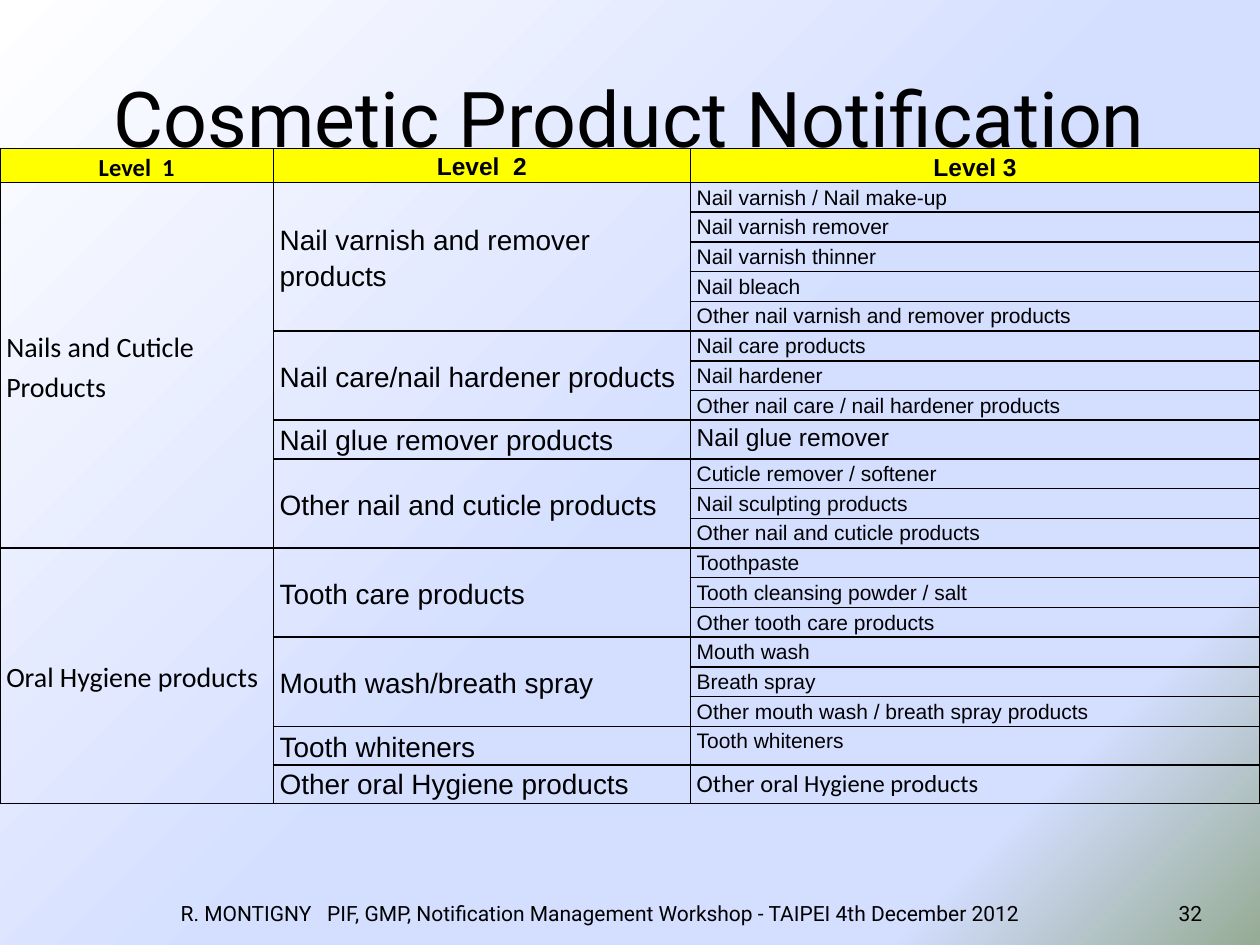
import pptx
import pptx.dml.color
import pptx.enum.text
import pptx.oxml
import pptx.oxml.ns
import pptx.util
from pptx.dml.color import RGBColor
from pptx.enum.text import MSO_ANCHOR, PP_ALIGN
from pptx.util import Inches, Pt

BLACK = RGBColor(0x00, 0x00, 0x00)
YELLOW = RGBColor(0xFF, 0xFF, 0x00)
WHITE = RGBColor(0xFF, 0xFF, 0xFF)
PALE_BLUE = RGBColor(0xD4, 0xDE, 0xFF)
SAGE = RGBColor(0x96, 0xAB, 0x94)
BACKGROUND_STOPS = [(0, WHITE), (53, PALE_BLUE), (83, PALE_BLUE), (100, SAGE)]

TOP, MIDDLE = MSO_ANCHOR.TOP, MSO_ANCHOR.MIDDLE
LEFT, CENTER, RIGHT = PP_ALIGN.LEFT, PP_ALIGN.CENTER, PP_ALIGN.RIGHT

HEADERS = [("Level  1", "Calibri", TOP), ("Level  2", "Arial", TOP), ("Level 3", "Arial", MIDDLE)]
# Level 1 -> level 2 -> level 3
CATEGORIES = {
    "Nails and Cuticle Products": {
        "Nail varnish and remover products": [
            "Nail varnish / Nail make-up", "Nail varnish remover", "Nail varnish thinner",
            "Nail bleach", "Other nail varnish and remover products"],
        "Nail care/nail hardener products": [
            "Nail care products", "Nail hardener", "Other nail care / nail hardener products"],
        "Nail glue remover products": ["Nail glue remover"],
        "Other nail and cuticle products": [
            "Cuticle remover / softener", "Nail sculpting products",
            "Other nail and cuticle products"],
    },
    "Oral Hygiene products": {
        "Tooth care products": [
            "Toothpaste", "Tooth cleansing powder / salt", "Other tooth care products"],
        "Mouth wash/breath spray": [
            "Mouth wash", "Breath spray", "Other mouth wash / breath spray products"],
        "Tooth whiteners": ["Tooth whiteners"],
        "Other oral Hygiene products": ["Other oral Hygiene products"],
    },
}
TOP_ANCHORED = {"Nail glue remover products", "Other oral Hygiene products"}
LEVEL_3_FONTS = {"Nail glue remover": (14, "Arial"), "Other oral Hygiene products": (14, "Calibri")}


def write(frame, text, size, font, align):
    paragraph = frame.paragraphs[0]
    paragraph.text = text
    paragraph.alignment = align
    paragraph.font.size = Pt(size)
    paragraph.font.name = font
    paragraph.font.color.rgb = BLACK
    return paragraph


def fill_cell(cell, text, size, font, align=LEFT, anchor=MIDDLE, bold=False):
    paragraph = write(cell.text_frame, text, size, font, align)
    paragraph.line_spacing = 1.15
    paragraph.font.bold = bold
    cell.vertical_anchor = anchor


prs = pptx.Presentation()
prs.slide_width, prs.slide_height = Inches(10), Inches(7.5)
slide = prs.slides.add_slide(prs.slide_layouts[6])

background = slide.background.fill
background.gradient()
background.gradient_angle = 315
stops = slide.element.find(".//" + pptx.oxml.ns.qn("a:gsLst"))
for stop in list(stops):
    stops.remove(stop)
for position, color in BACKGROUND_STOPS:
    stops.append(pptx.oxml.parse_xml(
        f'<a:gs {pptx.oxml.ns.nsdecls("a")} pos="{position * 1000}">'
        f'<a:srgbClr val="{color}"/></a:gs>'))

for text, box, size, align in [
    ("R. MONTIGNY   PIF, GMP, Notification Management Workshop - TAIPEI 4th December 2012",
     (0.59, 7.05, 8.35, 0.4), 12, CENTER),
    ("32", (9.09, 7.05, 0.55, 0.4), 12, RIGHT),
    ("Cosmetic Product Notification", (0.5, 0.3, 9, 1.25), 44, CENTER),
]:
    frame = slide.shapes.add_textbox(*map(Inches, box)).text_frame
    frame.word_wrap = True
    frame.vertical_anchor = MIDDLE
    write(frame, text, size, "Roboto", align)

row_count = 1 + sum(len(items) for groups in CATEGORIES.values() for items in groups.values())
table = slide.shapes.add_table(
    row_count, 3, Inches(0), Inches(1.18), Inches(10), Inches(5.12)).table
table.first_row = table.horz_banding = False
for column, width in zip(table.columns, (2.17, 3.31, 4.52)):
    column.width = Inches(width)
for row in table.rows:
    row.height = Inches(4.72) // (row_count - 1)
table.rows[0].height = Inches(0.26)

for cell in table.iter_cells():
    cell.margin_left = cell.margin_right = Inches(0.05)
    cell.margin_top = cell.margin_bottom = 0
    cell.fill.background()
    properties = cell._tc.get_or_add_tcPr()
    for index, side in enumerate(("lnL", "lnR", "lnT", "lnB")):
        properties.insert(index, pptx.oxml.parse_xml(
            f'<a:{side} {pptx.oxml.ns.nsdecls("a")} w="{Pt(1)}"><a:solidFill>'
            f'<a:srgbClr val="{BLACK}"/></a:solidFill></a:{side}>'))

for column, (text, font, anchor) in enumerate(HEADERS):
    cell = table.cell(0, column)
    fill_cell(cell, text, 14, font, CENTER, anchor, bold=True)
    cell.fill.solid()
    cell.fill.fore_color.rgb = YELLOW

row = 1
for category, groups in CATEGORIES.items():
    category_row = row
    for group, items in groups.items():
        group_row = row
        for item in items:
            size, font = LEVEL_3_FONTS.get(item, (12, "Arial"))
            fill_cell(table.cell(row, 2), item, size, font, anchor=TOP)
            row += 1
        group_cell = table.cell(group_row, 1)
        if len(items) > 1:
            group_cell.merge(table.cell(row - 1, 1))
        fill_cell(group_cell, group, 16, "Arial", anchor=TOP if group in TOP_ANCHORED else MIDDLE)
    category_cell = table.cell(category_row, 0)
    category_cell.merge(table.cell(row - 1, 0))
    fill_cell(category_cell, category, 16, "Calibri")

prs.save("out.pptx")
